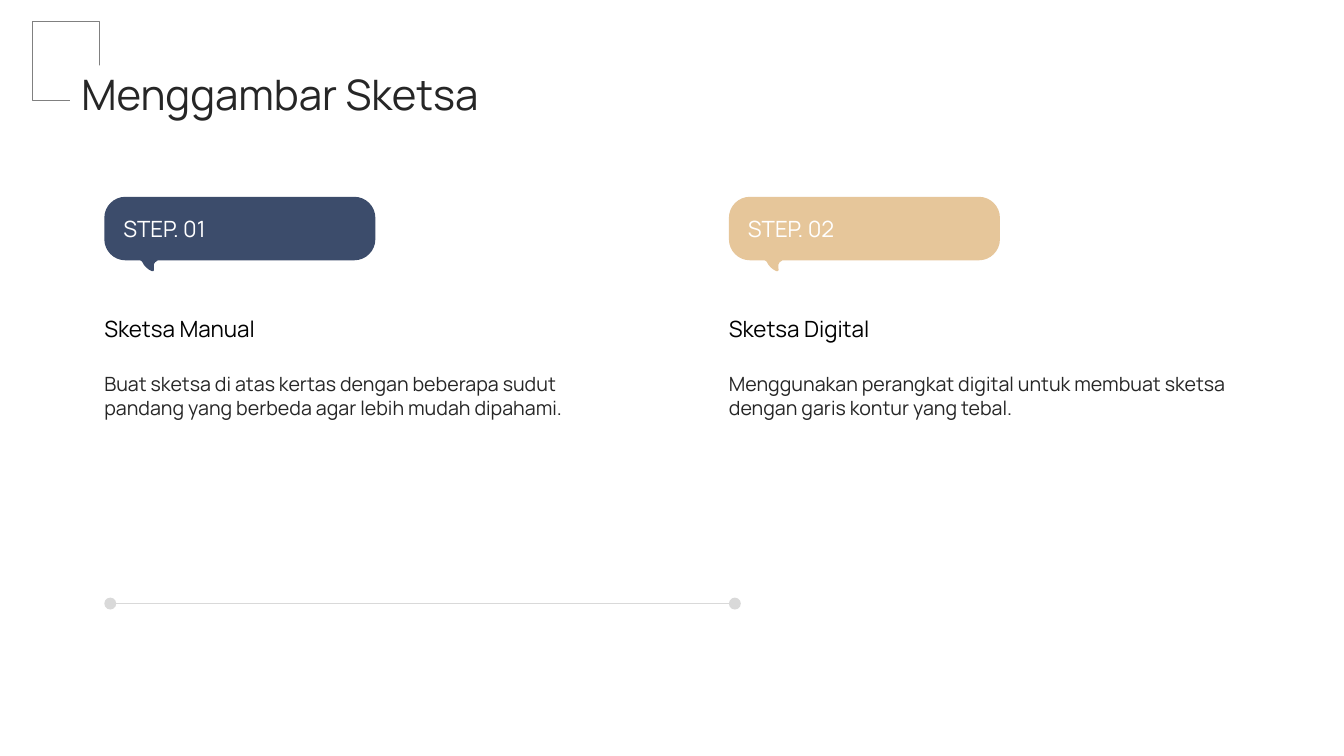
from pptx import Presentation
from pptx.dml.color import RGBColor
from pptx.enum.shapes import MSO_CONNECTOR, MSO_SHAPE
from pptx.enum.text import MSO_ANCHOR, MSO_AUTO_SIZE, PP_ALIGN
from pptx.oxml.ns import qn
from pptx.util import Cm, Pt

FONT = "Manrope"
INK, GREY, FRAME, WHITE = "262626", "D9D9D9", "808080", "FFFFFF"
LEFT, PITCH = 2.63, 15.74
STEPS = [
    ("STEP. 01", "3C4C6B", "Sketsa Manual",
     "Buat sketsa di atas kertas dengan beberapa sudut pandang yang berbeda "
     "agar lebih mudah dipahami."),
    ("STEP. 02", "E6C69A", "Sketsa Digital",
     "Menggunakan perangkat digital untuk membuat sketsa dengan garis kontur "
     "yang tebal."),
]
# Tail of the bubble, in cm from its corner: one point is a line, three are a curve
TAIL = [
    [(0.9, 1.6)],
    [(0.92, 1.6), (0.94, 1.6), (0.95, 1.63)],
    [(1, 1.75), (1.1, 1.83), (1.19, 1.87)],
    [(1.22, 1.88), (1.25, 1.88), (1.25, 1.85)],
    [(1.26, 1.84), (1.26, 1.83), (1.25, 1.82)],
    [(1.24, 1.75), (1.22, 1.66), (1.35, 1.6)],
    [(1.36, 1.6), (1.37, 1.6), (1.38, 1.6)],
]


def rgb(value):
    return RGBColor.from_string(value)


def paint(sp, fill=None, line=None, width=0.75):
    sp.shadow.inherit = False
    if fill:
        sp.fill.solid()
        sp.fill.fore_color.rgb = rgb(fill)
    else:
        sp.fill.background()
    if line:
        sp.line.color.rgb = rgb(line)
        sp.line.width = Pt(width)
    else:
        sp.line.fill.background()


def add_block(s, shape, x, y, w, h, **style):
    sp = s.shapes.add_shape(shape, Cm(x), Cm(y), Cm(w), Cm(h))
    paint(sp, **style)


def add_text(s, text, x, y, w, h, size, color, anchor=MSO_ANCHOR.TOP, wrap=True):
    sp = s.shapes.add_textbox(Cm(x), Cm(y), Cm(w), Cm(h))
    tf = sp.text_frame
    tf.margin_left = tf.margin_right = tf.margin_top = tf.margin_bottom = 0
    tf.word_wrap = wrap
    tf.vertical_anchor = anchor
    tf.text = text
    p = tf.paragraphs[0]
    p.alignment = PP_ALIGN.LEFT
    font = p.runs[0].font
    font.name, font.size, font.color.rgb = FONT, Pt(size), rgb(color)
    return sp


def add_outline(s, x, y, start, segments, fill):
    """Closed freeform in which each segment of three points is a Bézier curve."""
    def place(point):
        return Cm(x + point[0]), Cm(y + point[1])

    builder = s.shapes.build_freeform(*place(start))
    builder.add_line_segments([place(pt) for seg in segments for pt in seg], close=True)
    sp = builder.convert_to_shape()
    paint(sp, fill=fill)
    lines = iter(list(sp._element.iter(qn("a:lnTo"))))
    for segment in segments:
        first, *others = [next(lines) for _ in segment]
        if others:
            curve = first.makeelement(qn("a:cubicBezTo"), {})
            first.addprevious(curve)
            for line in (first, *others):
                curve.append(line[0])
                line.getparent().remove(line)


def add_bubble(s, x, y, fill, w=6.83, h=1.6, r=0.53):
    k = 0.45 * r  # distance of a control point from the corner
    segments = TAIL + [
        [(w - r, h)], [(w - k, h), (w, h - k), (w, h - r)],
        [(w, r)], [(w, k), (w - k, 0), (w - r, 0)],
        [(r, 0)], [(k, 0), (0, k), (0, r)],
        [(0, h - r)], [(0, h - k), (k, h), (r, h)],
    ]
    add_outline(s, x, y, (r, h), segments, fill)


def add_step(s, x, y, label, fill, heading, body):
    width = 12.9
    add_bubble(s, x, y, fill)
    add_text(s, label, x + 0.48, y + 0.33, 5.89, 0.94, 16, WHITE, MSO_ANCHOR.MIDDLE, wrap=False)
    add_text(s, heading, x, y + 2.21, width, 2.21, 16, "000000", MSO_ANCHOR.MIDDLE)
    add_text(s, body, x, y + 4.42, width, 3.99, 14, INK)


def add_timeline(s, x, y, pitch, dot=0.3):
    line = s.shapes.add_connector(MSO_CONNECTOR.STRAIGHT, Cm(x + dot / 2), Cm(y),
                                  Cm(x + pitch + dot / 2), Cm(y))
    line.line.color.rgb = rgb(GREY)
    line.line.width = Pt(1)
    properties = line._element.spPr
    properties.append(properties.makeelement(qn("a:effectLst"), {}))
    for i in reversed(range(len(STEPS))):
        add_block(s, MSO_SHAPE.OVAL, x + i * pitch, y - dot / 2, dot, dot, fill=GREY)


def add_title(s, x, y, text):
    add_block(s, MSO_SHAPE.RECTANGLE, x, y, 1.7, 1.99, line=FRAME)
    add_block(s, MSO_SHAPE.RECTANGLE, x + 0.96, y + 1.11, 1.55, 1.27, fill=WHITE)
    title = add_text(s, text, x + 1.24, y + 1.19, 28.19, 1.17, 30, INK)
    title.text_frame.auto_size = MSO_AUTO_SIZE.SHAPE_TO_FIT_TEXT


def main():
    prs = Presentation()
    prs.slide_width, prs.slide_height = Cm(33.87), Cm(19.05)
    s = prs.slides.add_slide(prs.slide_layouts[6])
    for i, step in enumerate(STEPS):
        add_step(s, LEFT + i * PITCH, 4.96, *step)
    add_timeline(s, LEFT, 15.21, PITCH)
    add_title(s, 0.81, 0.54, "Menggambar Sketsa")
    prs.save("out.pptx")


if __name__ == "__main__":
    main()
